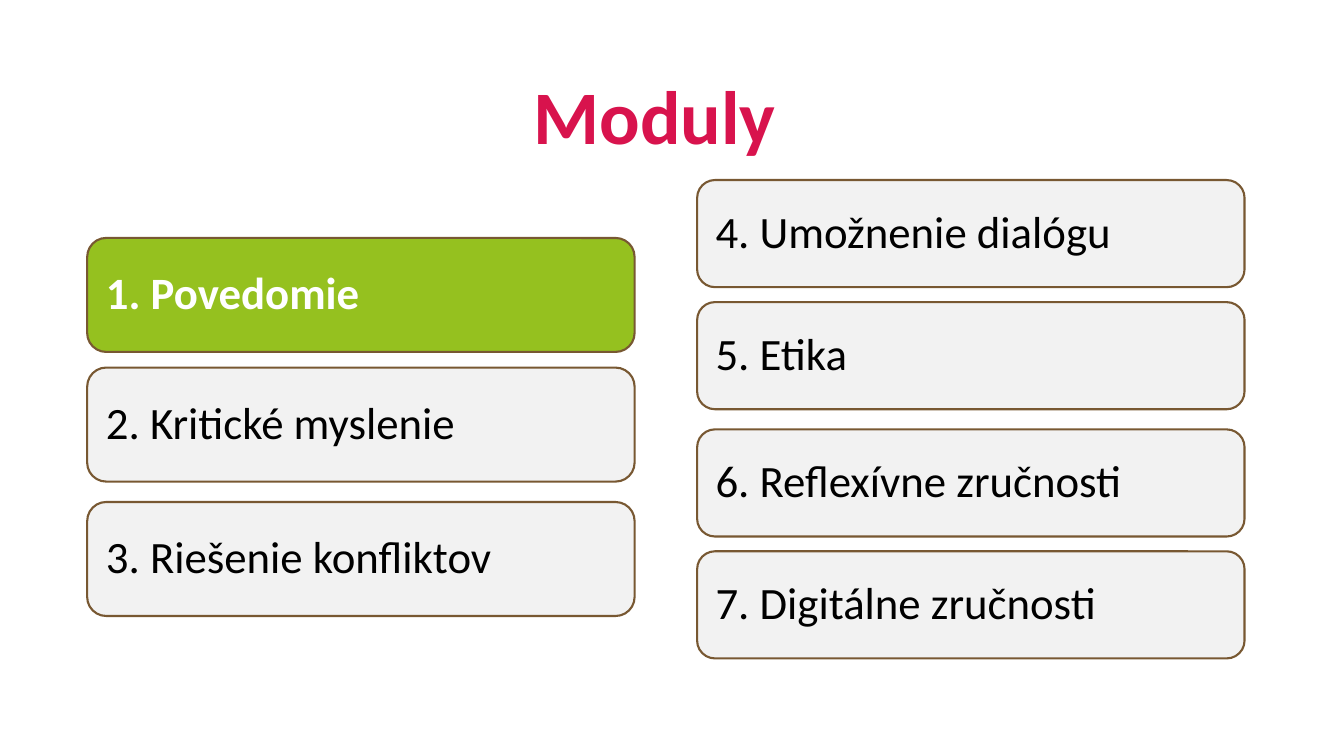
from dataclasses import dataclass

import pptx
import pptx.util
import pptx.dml.color
import pptx.enum.shapes
import pptx.enum.text

Pt = pptx.util.Pt
RGB = pptx.dml.color.RGBColor.from_string

TITLE = "Moduly"
ACTIVE = "1. Povedomie"
COLUMNS = [
    {"left": 62.3, "height": 81.4, "modules": [
        (170, "1. Povedomie"),
        (262.6, "2. Kritické myslenie"),
        (358.6, "3. Riešenie konfliktov"),
    ]},
    {"left": 498, "height": 76.5, "modules": [
        (128.6, "4. Umožnenie dialógu"),
        (215.8, "5. Etika"),
        (306.7, "6. Reflexívne zručnosti"),
        (393.8, "7. Digitálne zručnosti"),
    ]},
]
CARD_WIDTH = 391
CARD_INSET = 9.4


@dataclass(frozen=True)
class Theme:
    font: str = "Calibri"
    title: str = "D8134D"
    active_fill: str = "95C11F"
    active_text: str = "FFFFFF"
    fill: str = "F2F2F2"
    text: str = "000000"
    line: str = "785832"
    title_size: int = 54
    card_size: int = 32
    line_width: float = 1.5


theme = Theme()


def write(tf, text, size, color, bold, align):
    p = tf.paragraphs[0]
    p.alignment = align
    p.line_spacing = 0.9
    r = p.add_run()
    r.text = text
    r.font.name = theme.font
    r.font.size = Pt(size)
    r.font.bold = bold
    r.font.color.rgb = RGB(color)


def add_card(shapes, left, top, height, text):
    active = text == ACTIVE
    sp = shapes.add_shape(pptx.enum.shapes.MSO_SHAPE.ROUNDED_RECTANGLE,
                          Pt(left), Pt(top), Pt(CARD_WIDTH), Pt(height))
    sp.shadow.inherit = False
    sp.fill.solid()
    sp.fill.fore_color.rgb = RGB(theme.active_fill if active else theme.fill)
    sp.line.color.rgb = RGB(theme.line)
    sp.line.width = Pt(theme.line_width)
    tf = sp.text_frame
    tf.word_wrap = True
    tf.vertical_anchor = pptx.enum.text.MSO_ANCHOR.MIDDLE
    tf.margin_left = tf.margin_right = Pt(CARD_INSET)
    tf.margin_top = tf.margin_bottom = Pt(CARD_INSET)
    write(tf, text, theme.card_size,
          theme.active_text if active else theme.text, active,
          pptx.enum.text.PP_ALIGN.LEFT)


def main():
    prs = pptx.Presentation()
    prs.slide_width, prs.slide_height = Pt(960), Pt(540)
    s = prs.slides.add_slide(prs.slide_layouts.get_by_name("Title Only"))

    title = s.shapes.title
    title.left, title.top = Pt(0.7), Pt(0)
    title.width, title.height = Pt(933.8), Pt(118.8)
    title.text_frame.vertical_anchor = pptx.enum.text.MSO_ANCHOR.BOTTOM
    write(title.text_frame, TITLE, theme.title_size, theme.title, True,
          pptx.enum.text.PP_ALIGN.CENTER)

    for column in COLUMNS:
        group = s.shapes.add_group_shape()
        for top, text in column["modules"]:
            add_card(group.shapes, column["left"], top, column["height"], text)

    prs.save("out.pptx")


if __name__ == "__main__":
    main()
